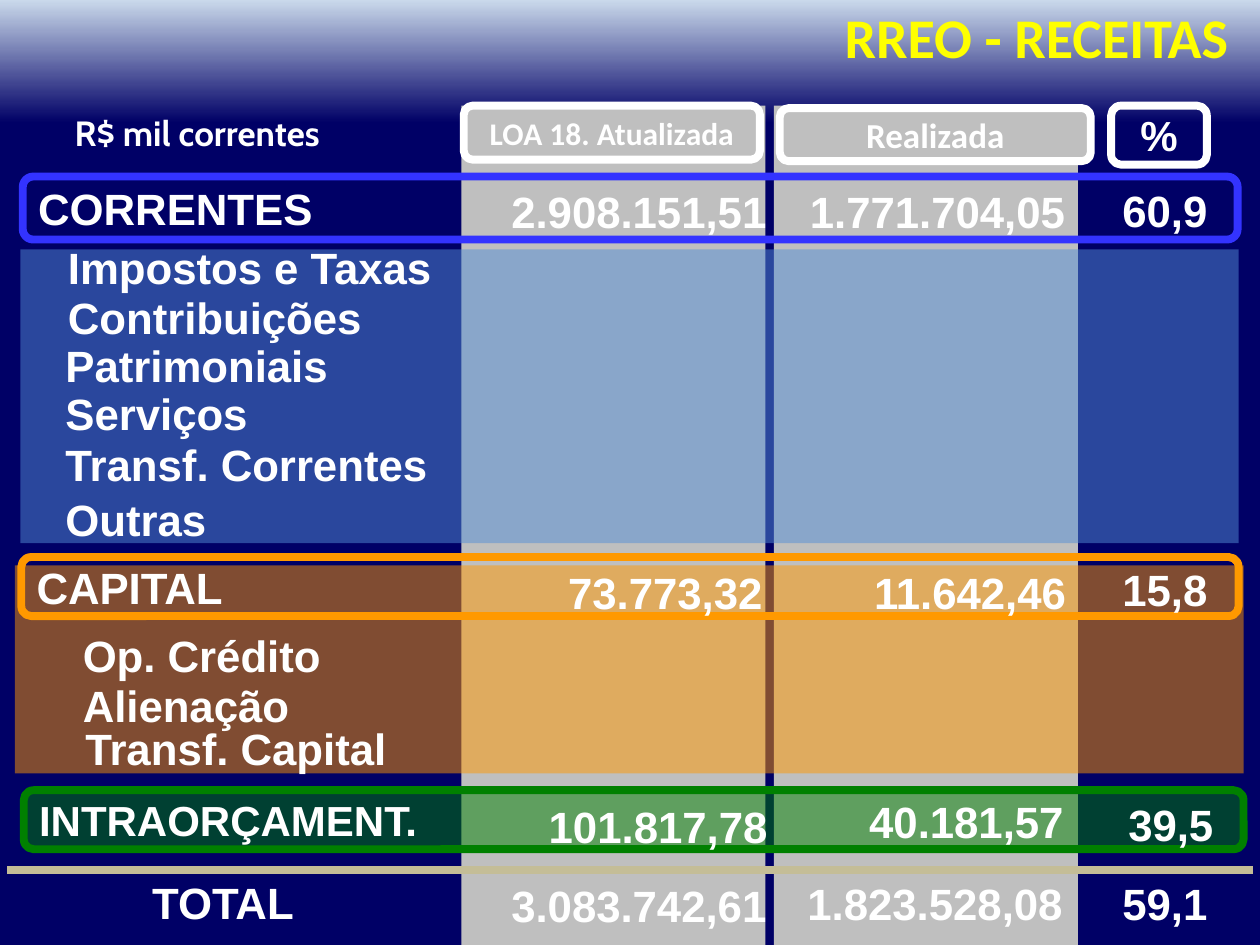
from dataclasses import dataclass

from lxml import etree
from pptx import Presentation
from pptx import util as u
from pptx.dml.color import RGBColor
from pptx.enum import shapes, text
from pptx.oxml import ns


@dataclass(frozen=True)
class Theme:
    sky: str = "CAD9EB"
    navy: str = "000066"
    yellow: str = "FFFF00"
    white: str = "FFFFFF"
    grey: str = "BFBFBF"
    blue: str = "3333FF"
    light_blue: str = "558ED5"
    orange: str = "FF9900"
    green: str = "008000"
    sand: str = "C4BD97"
    title_size: int = 32
    body_size: int = 25
    border: float = 4.5


theme = Theme()
LEFT, CENTER, RIGHT = text.PP_ALIGN.LEFT, text.PP_ALIGN.CENTER, text.PP_ALIGN.RIGHT
RECT, ROUNDED = shapes.MSO_SHAPE.RECTANGLE, shapes.MSO_SHAPE.ROUNDED_RECTANGLE

deck = Presentation()
deck.slide_width, deck.slide_height = u.Cm(25.4), u.Cm(19.05)
page = deck.slides.add_slide(deck.slide_layouts[5])

backdrop = page.background.fill
backdrop.gradient()
backdrop.gradient_angle = 270
for stop, color, position in zip(backdrop.gradient_stops, (theme.sky, theme.navy), (0, 0.13)):
    stop.color.rgb = RGBColor.from_string(color)
    stop.position = position


def write(box, words, align=LEFT, size=theme.body_size, font="Arial",
          color=theme.white, wrap=True, anchor=text.MSO_ANCHOR.TOP):
    frame = box.text_frame
    frame.word_wrap = wrap
    frame.auto_size = text.MSO_AUTO_SIZE.NONE
    frame.vertical_anchor = anchor
    para = frame.paragraphs[0]
    para.alignment = align
    span = para.add_run()
    span.text = words
    span.font.name, span.font.size, span.font.bold = font, u.Pt(size), True
    span.font.color.rgb = RGBColor.from_string(color)


def add_panel(kind, place, fill=None, alpha=None, line=None):
    """Add a shape; alpha is the fill's opacity in percent."""
    panel = page.shapes.add_shape(kind, *map(u.Cm, place))
    panel.shadow.inherit = False
    if fill:
        panel.fill.solid()
        panel.fill.fore_color.rgb = RGBColor.from_string(fill)
    else:
        panel.fill.background()
    if alpha:
        color = panel.fill._xPr.find(".//" + ns.qn("a:srgbClr"))
        etree.SubElement(color, ns.qn("a:alpha"), val=str(alpha * 1000))
    if line:
        panel.line.color.rgb = RGBColor.from_string(line)
        panel.line.width = u.Pt(theme.border)
    else:
        panel.line.fill.background()
    return panel


# Title
title = page.shapes.title
title.left, title.top, title.width, title.height = map(u.Cm, (10.49, -0.08, 14.53, 1.63))
write(title, "RREO - RECEITAS", RIGHT, theme.title_size, "Calibri", theme.yellow)

# Column strips and their headings
for left in (15.6, 9.3):
    add_panel(RECT, (left, 2.13, 6.13, 16.92), theme.grey)

headings = [
    ("Realizada", (15.72, 2.18, 6.27, 1.07), theme.grey, 20, "Calibri"),
    ("LOA 18. Atualizada", (9.35, 2.13, 5.97, 1.09), theme.grey, 18, "Calibri"),
    ("%", (22.4, 2.13, 1.93, 1.19), None, 24, "Arial"),
]
for words, place, fill, size, font in headings:
    heading = add_panel(ROUNDED, place, fill, line=theme.white)
    write(heading, words, CENTER, size, font, wrap=False, anchor=text.MSO_ANCHOR.MIDDLE)

unit_label = page.shapes.add_textbox(*map(u.Cm, (0.3, 2.13, 6.4, 1.12)))
write(unit_label, "R$ mil correntes", RIGHT, 20, "Cabin", wrap=False)

# Translucent bands behind the detail rows
add_panel(RECT, (0.3, 11.4, 24.77, 4.19), theme.orange, 50)
add_panel(RECT, (0.41, 5.03, 24.56, 5.92), theme.light_blue, 50)

# Framed category rows
categories = [
    ("CORRENTES", (0.46, 3.56, 24.49, 1.27), None, theme.blue, 25),
    ("CAPITAL", (0.43, 11.23, 24.54, 1.19), None, theme.orange, 25),
    ("INTRAORÇAMENT.", (0.48, 15.93, 24.59, 1.19), theme.green, theme.green, 24),
]
for words, place, fill, line, size in categories:
    category = add_panel(ROUNDED, place, fill, 50 if fill else None, line)
    write(category, words, size=size, wrap=False, anchor=text.MSO_ANCHOR.MIDDLE)

# Detail labels: left, top
details = [
    ("Impostos e Taxas", 1.12, 4.72),
    ("Contribuições", 1.12, 5.74),
    ("Patrimoniais", 1.07, 6.71),
    ("Serviços", 1.07, 7.67),
    ("Transf. Correntes", 1.07, 8.71),
    ("Outras", 1.07, 9.8),
    ("Op. Crédito", 1.42, 12.55),
    ("Alienação", 1.42, 13.56),
    ("Transf. Capital", 1.47, 14.43),
]
for words, left, top in details:
    write(page.shapes.add_textbox(*map(u.Cm, (left, top, 8, 1.32))), words)

# Total row
rule = page.shapes.add_connector(
    shapes.MSO_CONNECTOR.STRAIGHT, u.Cm(0.15), u.Cm(17.53), u.Cm(25.25), u.Cm(17.53))
rule.line.color.rgb = RGBColor.from_string(theme.sand)
rule.line.width = u.Pt(theme.border)
etree.SubElement(rule._element.spPr, ns.qn("a:effectLst"))
write(page.shapes.add_textbox(*map(u.Cm, (1.09, 17.53, 6.81, 1.32))), "TOTAL", CENTER)

# Values: text, right edge, top
value_widths = (6.3, 6.1, 2.4)
value_rows = [
    [("2.908.151,51", 15.7, 3.61), ("1.771.704,05", 21.72, 3.61), ("60,9", 24.59, 3.58)],
    [("73.773,32", 15.62, 11.28), ("11.642,46", 21.74, 11.28), ("15,8", 24.59, 11.23)],
    [("101.817,78", 15.72, 16), ("40.181,57", 21.69, 15.9), ("39,5", 24.71, 15.95)],
    [("3.083.742,61", 15.7, 17.6), ("1.823.528,08", 21.67, 17.55), ("59,1", 24.59, 17.55)],
]
for row in value_rows:
    for (words, right, top), width in zip(row, value_widths):
        place = (right - width, top, width, 1.32)
        write(page.shapes.add_textbox(*map(u.Cm, place)), words, RIGHT)

deck.save("out.pptx")
